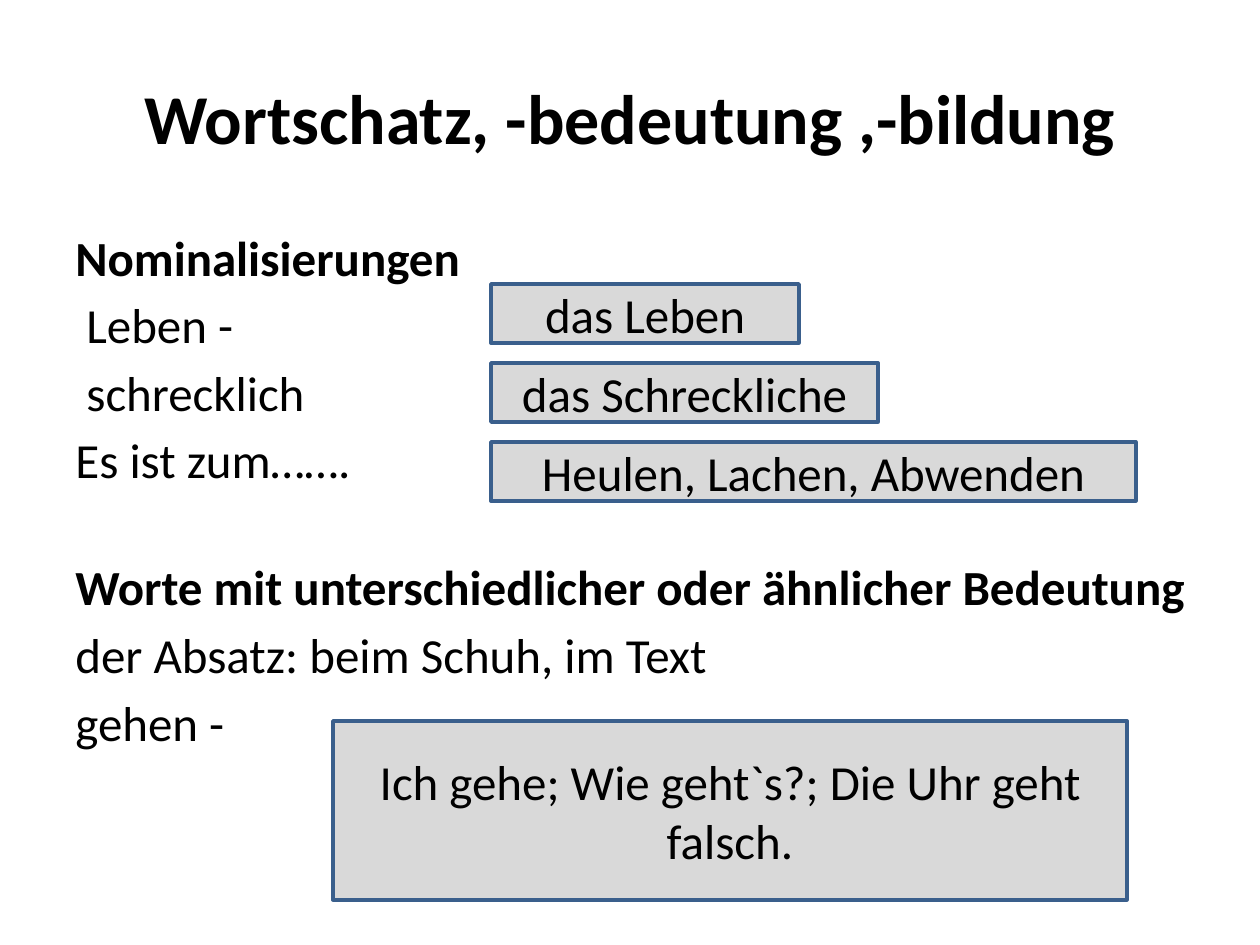
"""Build the vocabulary slide with its answer boxes."""
from pptx import Presentation
from pptx.dml.color import RGBColor as RGB
from pptx.enum.shapes import MSO_SHAPE as SHAPE
from pptx.enum.text import MSO_ANCHOR as ANCHOR, PP_ALIGN as ALIGN
from pptx.util import Pt

THEME = {
    "font": "Calibri", "title": 40, "body": 28, "line": 2,
    "ink": RGB.from_string("000000"),
    "fill": RGB.from_string("D9D9D9"),
    "edge": RGB.from_string("3A5F8C"),
}


def px(n):
    return round(n * 914400 / 126)


def write(p, text, size=THEME["body"], bold=False, align=ALIGN.LEFT, before=0, indent=0):
    p.alignment = align
    p.space_before = Pt(before)
    if indent:
        p._p.get_or_add_pPr().set("marL", str(px(indent)))
    r = p.add_run()
    r.text = text
    r.font.name, r.font.size, r.font.bold = THEME["font"], Pt(size), bold
    r.font.color.rgb = THEME["ink"]


prs = Presentation()
prs.slide_width, prs.slide_height = px(1260), px(945)
s = prs.slides.add_slide(prs.slide_layouts[6])

tf = s.shapes.add_textbox(px(63), px(38), px(1134), px(157)).text_frame
tf.word_wrap = True
tf.vertical_anchor = ANCHOR.MIDDLE
write(tf.paragraphs[0], "Wortschatz, -bedeutung ,-bildung",
      size=THEME["title"], bold=True, align=ALIGN.CENTER)

lines = [
    ("Nominalisierungen", {"bold": True}),
    ("Leben -", {"before": 5, "indent": 11}),
    ("schrecklich", {"before": 5, "indent": 11}),
    ("Es ist zum…….", {"before": 5}),
    ("Worte mit unterschiedlicher oder ähnlicher Bedeutung", {"bold": True, "before": 39}),
    ("der Absatz: beim Schuh, im Text", {"before": 5}),
    ("gehen -", {"before": 5}),
]
tf = s.shapes.add_textbox(px(63), px(221), px(1153), px(688)).text_frame
tf.word_wrap = True
for i, (text, style) in enumerate(lines):
    p = tf.add_paragraph() if i else tf.paragraphs[0]
    write(p, text, **style)

nouns = [("das Leben", 308), ("das Schreckliche", 387), ("Heulen, Lachen, Abwenden", 645)]
answers = [(text, 491, 284 + 79 * i, w, 59) for i, (text, w) in enumerate(nouns)]
answers.append(("Ich gehe; Wie geht`s?; Die Uhr geht falsch.", 333, 721, 794, 179))
for text, x, y, w, h in answers:
    sp = s.shapes.add_shape(SHAPE.RECTANGLE, px(x), px(y), px(w), px(h))
    sp.shadow.inherit = False
    sp.fill.solid()
    sp.fill.fore_color.rgb = THEME["fill"]
    sp.line.color.rgb = THEME["edge"]
    sp.line.width = Pt(THEME["line"])
    tf = sp.text_frame
    tf.word_wrap = True
    tf.vertical_anchor = ANCHOR.MIDDLE
    write(tf.paragraphs[0], text, align=ALIGN.CENTER)

prs.save("out.pptx")
